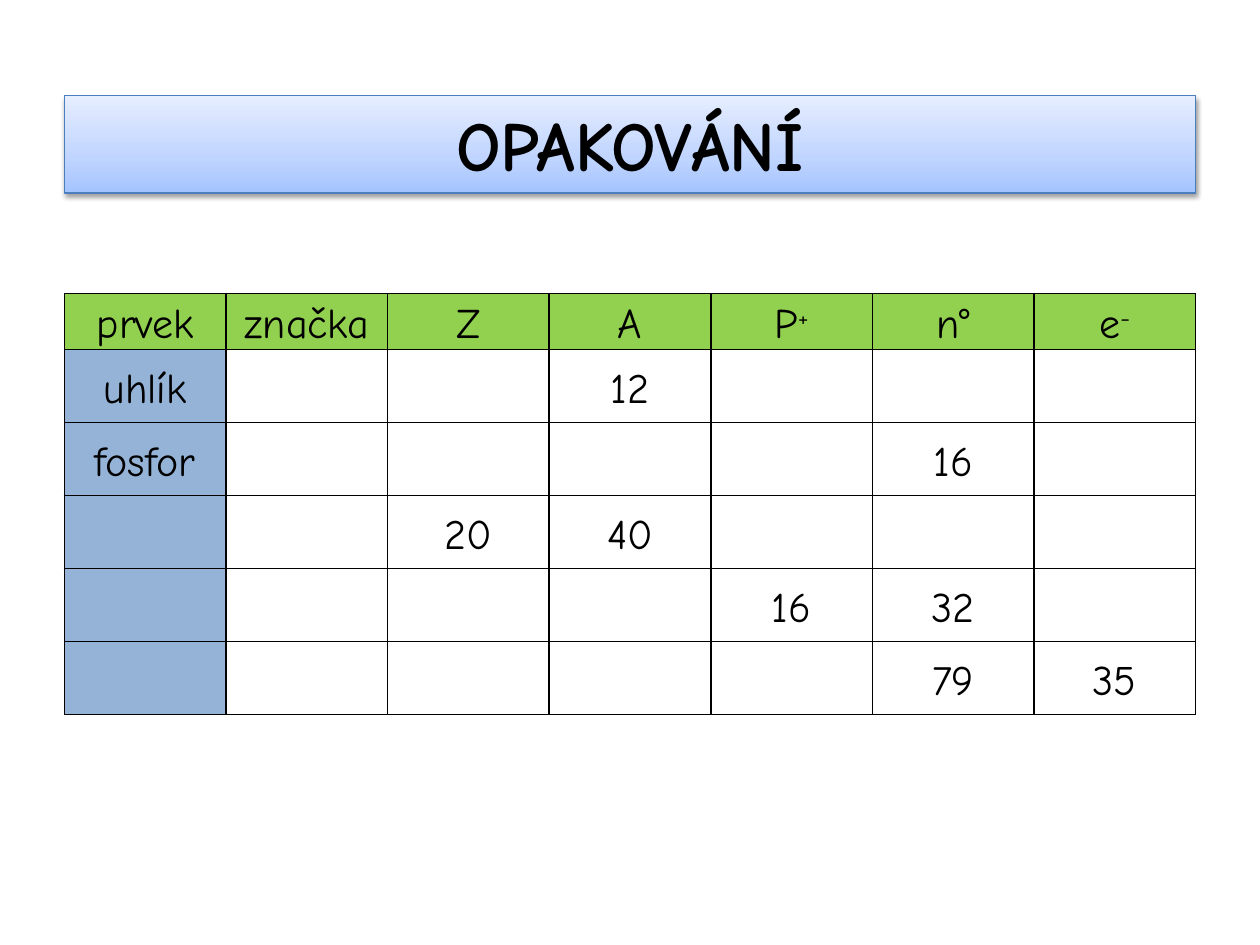
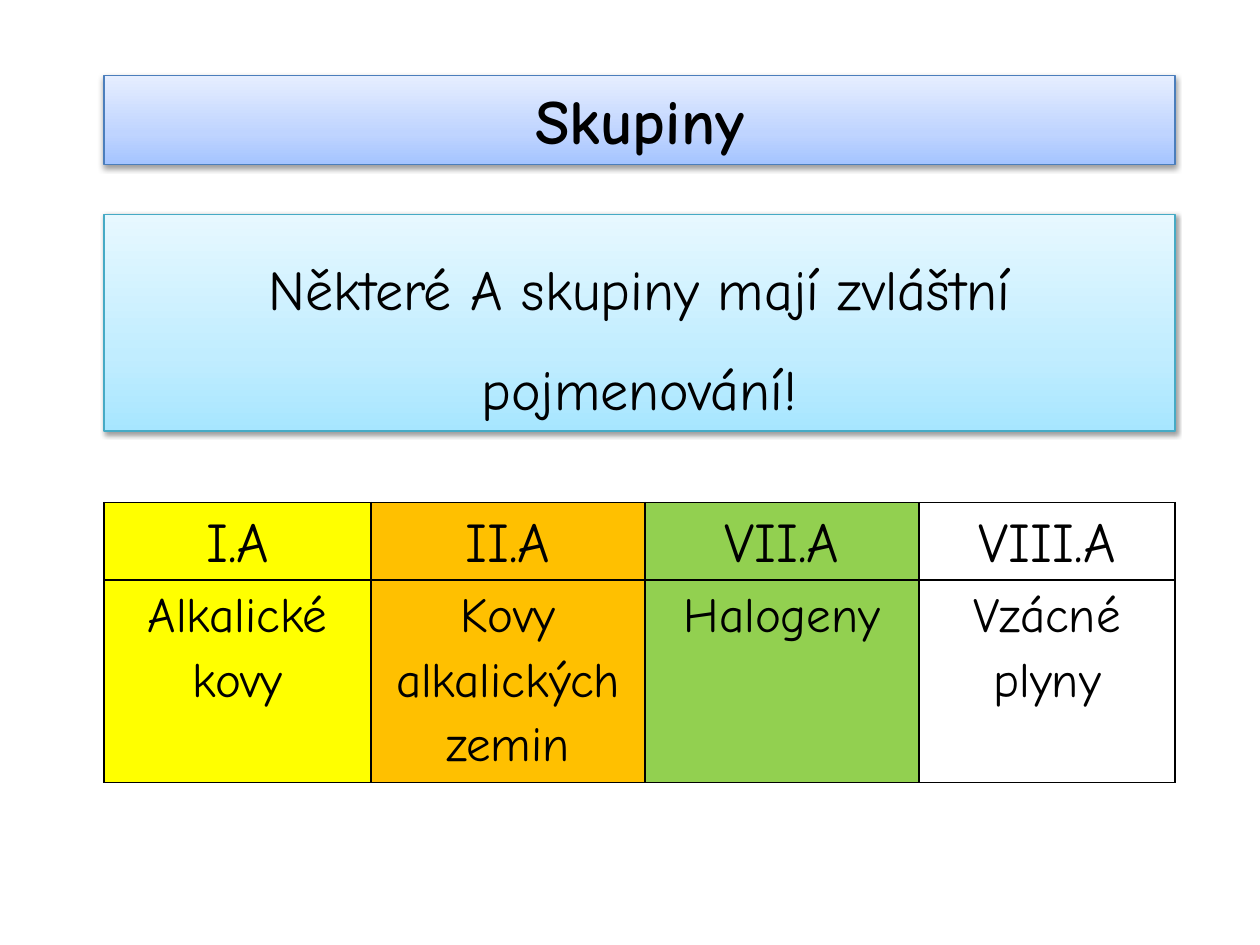
from lxml import etree
from pptx import Presentation
from pptx import util as u
from pptx.dml.color import RGBColor
from pptx.enum import shapes, text
from pptx.oxml.ns import qn

FONT = "Comic Neue"
BLACK = RGBColor(0x00, 0x00, 0x00)
GREEN = RGBColor(0x92, 0xD0, 0x50)
STEEL_BLUE = RGBColor(0x95, 0xB3, 0xD7)
YELLOW = RGBColor(0xFF, 0xFF, 0x00)
ORANGE = RGBColor(0xFF, 0xC0, 0x00)
BLUE_LINE = RGBColor(0x4B, 0x7E, 0xBC)
AQUA_LINE = RGBColor(0x46, 0xAA, 0xC5)

# Gradient colours from bottom to top
BLUE_GRADIENT = (RGBColor(0xA4, 0xC4, 0xFF), RGBColor(0xBF, 0xD4, 0xFF),
                 RGBColor(0xE6, 0xEE, 0xFF))
AQUA_GRADIENT = (RGBColor(0xA7, 0xE6, 0xFF), RGBColor(0xC1, 0xED, 0xFF),
                 RGBColor(0xE7, 0xF8, 0xFF))
GRADIENT_STOPS = (0, 35, 100)

ELEMENT_HEADINGS = ["prvek", "značka", "Z", "A", ("P", "+"), "n°", ("e", "-")]
ELEMENT_ROWS = [
    ["uhlík", "", "", "12", "", "", ""],
    ["fosfor", "", "", "", "", "16", ""],
    ["", "", "20", "40", "", "", ""],
    ["", "", "", "", "16", "32", ""],
    ["", "", "", "", "", "79", "35"],
]
GROUPS = [
    ("I.A", "Alkalické kovy", YELLOW, 5.38),
    ("II.A", "Kovy alkalických zemin", ORANGE, 5.52),
    ("VII.A", "Halogeny", GREEN, 5.53),
    ("VIII.A", "Vzácné plyny", None, 5.16),
]


def add_child(parent, tag, **attributes):
    child = etree.SubElement(parent, qn(tag))
    for name, value in attributes.items():
        child.set(name, str(value))
    return child


def write_text(paragraph, content, size, spacing, bold=False):
    """Write a string, or a (base, superscript) pair, centred."""
    paragraph.alignment = text.PP_ALIGN.CENTER
    paragraph.line_spacing = spacing
    parts = (content,) if isinstance(content, str) else content
    for index, part in enumerate(parts):
        run = paragraph.add_run()
        run.text = part
        run.font.name = FONT
        run.font.size = u.Pt(size)
        run.font.bold = bold
        run.font.color.rgb = BLACK
        if index:
            run._r.get_or_add_rPr().set("baseline", "30000")


def add_panel(slide, box, content, size, gradient, line_colour,
              spacing=1.0, bold=False):
    """Gradient rectangle with a soft shadow and centred text."""
    shape = slide.shapes.add_shape(shapes.MSO_SHAPE.RECTANGLE,
                                   *(u.Cm(length) for length in box))
    shape.line.color.rgb = line_colour
    shape.line.width = u.Pt(0.75)

    # Three-stop gradient
    shape.fill.gradient()
    shape.fill.gradient_angle = 90
    properties = shape._element.spPr
    stops = properties.find(".//" + qn("a:gsLst"))
    for stop in list(stops):
        stops.remove(stop)
    for position, colour in zip(GRADIENT_STOPS, gradient):
        stop = add_child(stops, "a:gs", pos=position * 1000)
        add_child(stop, "a:srgbClr", val=colour)

    # Shadow below the panel
    shape.shadow.inherit = False
    shadow = add_child(properties.find(qn("a:effectLst")), "a:outerShdw",
                       blurRad=40000, dist=20000, dir=5400000, rotWithShape=0)
    shade = add_child(shadow, "a:srgbClr", val=BLACK)
    add_child(shade, "a:alpha", val=38000)

    # Text
    frame = shape.text_frame
    frame.word_wrap = True
    frame.auto_size = text.MSO_AUTO_SIZE.SHAPE_TO_FIT_TEXT
    frame.vertical_anchor = text.MSO_ANCHOR.TOP
    write_text(frame.paragraphs[0], content, size, spacing, bold)


def add_title(slide, box, content, size):
    add_panel(slide, box, content, size, BLUE_GRADIENT, BLUE_LINE, bold=True)


def add_grid(slide, left, top, widths, heights):
    """Plain table without style effects."""
    frame = slide.shapes.add_table(
        len(heights), len(widths), u.Cm(left), u.Cm(top),
        u.Cm(sum(widths)), u.Cm(sum(heights)))
    table = frame.table
    table.first_row = table.horz_banding = False
    for column, width in zip(table.columns, widths):
        column.width = u.Cm(width)
    for row, height in zip(table.rows, heights):
        row.height = u.Cm(height)
    return table


def fill_cell(cell, content, size, colour, anchor):
    cell.margin_left = cell.margin_right = u.Cm(0.18)
    cell.margin_top = cell.margin_bottom = 0
    cell.vertical_anchor = anchor
    for side in ("a:lnL", "a:lnR", "a:lnT", "a:lnB"):
        border = add_child(cell._tc.get_or_add_tcPr(), side, w=u.Pt(1))
        add_child(add_child(border, "a:solidFill"), "a:srgbClr", val=BLACK)
    if colour is None:
        cell.fill.background()
    else:
        cell.fill.solid()
        cell.fill.fore_color.rgb = colour
    if content:
        write_text(cell.text_frame.paragraphs[0], content, size, 1.15)


def add_element_table(slide, left, top, width):
    columns = len(ELEMENT_HEADINGS)
    rows = [ELEMENT_HEADINGS] + ELEMENT_ROWS
    table = add_grid(slide, left, top, [width / columns] * columns,
                     [1.13] + [1.47] * len(ELEMENT_ROWS))
    for row_index, row in enumerate(rows):
        for column_index, content in enumerate(row):
            if row_index == 0:
                colour = GREEN
            else:
                colour = STEEL_BLUE if column_index == 0 else None
            fill_cell(table.cell(row_index, column_index), content, 24,
                      colour, text.MSO_ANCHOR.MIDDLE)


def add_group_table(slide, left, top):
    table = add_grid(slide, left, top, [group[3] for group in GROUPS],
                     [1.55, 4.09])
    for column, (name, description, colour, _) in enumerate(GROUPS):
        for row, (content, size) in enumerate([(name, 32), (description, 28)]):
            fill_cell(table.cell(row, column), content, size, colour,
                      text.MSO_ANCHOR.TOP)


def build_revision_slide(slide):
    left, width = 1.3, 22.8
    add_element_table(slide, left, 5.92, width)
    add_title(slide, (left, 1.93, width, 1.96), "OPAKOVÁNÍ", 40)


def build_groups_slide(slide):
    left, width = 2.1, 21.59
    add_title(slide, (left, 1.52, width, 1.8), "Skupiny", 36)
    add_panel(slide, (left, 4.32, width, 4.37),
              "Některé A skupiny mají zvláštní pojmenování!", 32,
              AQUA_GRADIENT, AQUA_LINE, spacing=1.5)
    add_group_table(slide, left, 10.13)


def main():
    presentation = Presentation()
    presentation.slide_width = u.Cm(25.4)
    presentation.slide_height = u.Cm(19.05)
    blank = presentation.slide_layouts[6]
    for build in (build_revision_slide, build_groups_slide):
        build(presentation.slides.add_slide(blank))
    presentation.save("out.pptx")


if __name__ == "__main__":
    main()
